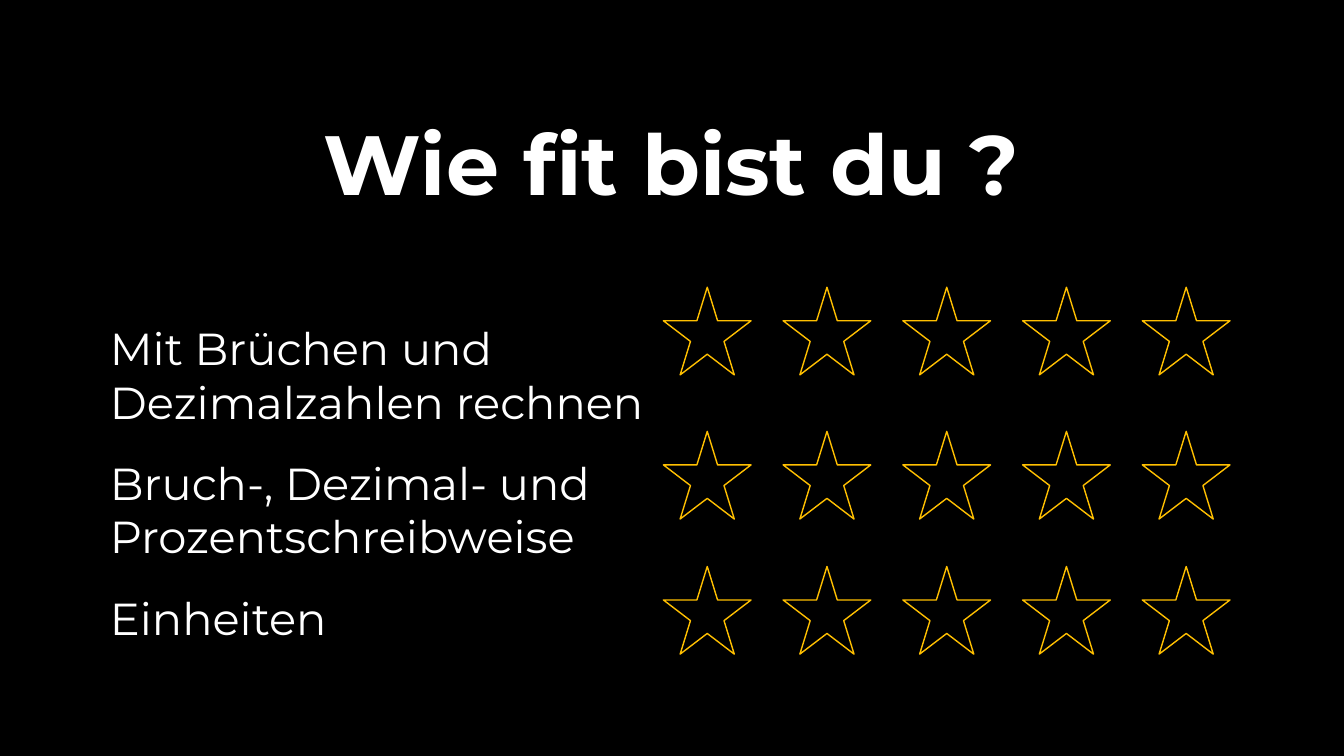
from pptx import Presentation
from pptx.dml.color import RGBColor
from pptx.enum.shapes import MSO_SHAPE
from pptx.enum.text import MSO_ANCHOR, MSO_AUTO_SIZE, PP_ALIGN
from pptx.util import Inches, Pt

COLORS = {"background": "000000", "text": "FFFFFF", "star": "FFC000"}
FONT = "Montserrat"
TITLE = "Wie fit bist du ?"
TOPICS = [
    "Mit Brüchen und\vDezimalzahlen rechnen",
    "Bruch-, Dezimal- und\vProzentschreibweise",
    "Einheiten",
]
ROW_TOPS = [2.85, 4.28, 5.62]
STARS_PER_ROW = 5
STAR_SIZE = 0.87
FIRST_STAR, LAST_STAR = 6.58, 11.33


def color(name):
    """Return the named palette colour."""
    return RGBColor.from_string(COLORS[name])


def place(sp, left, top, width, height):
    """Set the position and size of a shape in inches."""
    sp.left, sp.top = Inches(left), Inches(top)
    sp.width, sp.height = Inches(width), Inches(height)


def write(sp, paragraphs, size, bold=False, align=PP_ALIGN.LEFT, gap=0):
    """Fill a shape with formatted paragraphs, gap points apart."""
    tf = sp.text_frame
    tf.word_wrap = True
    tf.auto_size = MSO_AUTO_SIZE.NONE
    tf.vertical_anchor = MSO_ANCHOR.TOP
    tf.margin_left = tf.margin_right = tf.margin_top = tf.margin_bottom = 0
    for i, text in enumerate(paragraphs):
        p = tf.add_paragraph() if i else tf.paragraphs[0]
        p.alignment = align
        p.line_spacing = 1.0
        p.space_before = Pt(gap if i else 0)
        p.space_after = Pt(0)
        p.text = text
        for r in p.runs:
            r.font.name = FONT
            r.font.size = Pt(size)
            r.font.bold = bold
            r.font.color.rgb = color("text")


def add_star_row(s, top):
    """Draw one group of evenly spaced outlined stars."""
    group = s.shapes.add_group_shape()
    step = (LAST_STAR - FIRST_STAR) / (STARS_PER_ROW - 1)
    for i in range(STARS_PER_ROW):
        star = group.shapes.add_shape(
            MSO_SHAPE.STAR_5_POINT, Inches(FIRST_STAR + i * step), Inches(top),
            Inches(STAR_SIZE), Inches(STAR_SIZE))
        star.shadow.inherit = False
        star.fill.background()
        star.line.color.rgb = color("star")
        star.line.width = Pt(1)


def main():
    """Build the self-assessment slide and save it."""
    prs = Presentation()
    prs.slide_width, prs.slide_height = Inches(13.33), Inches(7.5)
    s = prs.slides.add_slide(prs.slide_layouts[5])
    s.background.fill.solid()
    s.background.fill.fore_color.rgb = color("background")

    title = s.shapes.title
    place(title, 0.15, 1.11, 13.02, 1.1)
    write(title, [TITLE], 60, bold=True, align=PP_ALIGN.CENTER)

    topics = s.shapes.add_textbox(0, 0, 0, 0)
    place(topics, 1.09, 3.18, 5.45, 3.3)
    write(topics, TOPICS, 32, gap=19.5)

    for top in ROW_TOPS:
        add_star_row(s, top)
    prs.save("out.pptx")


if __name__ == "__main__":
    main()
